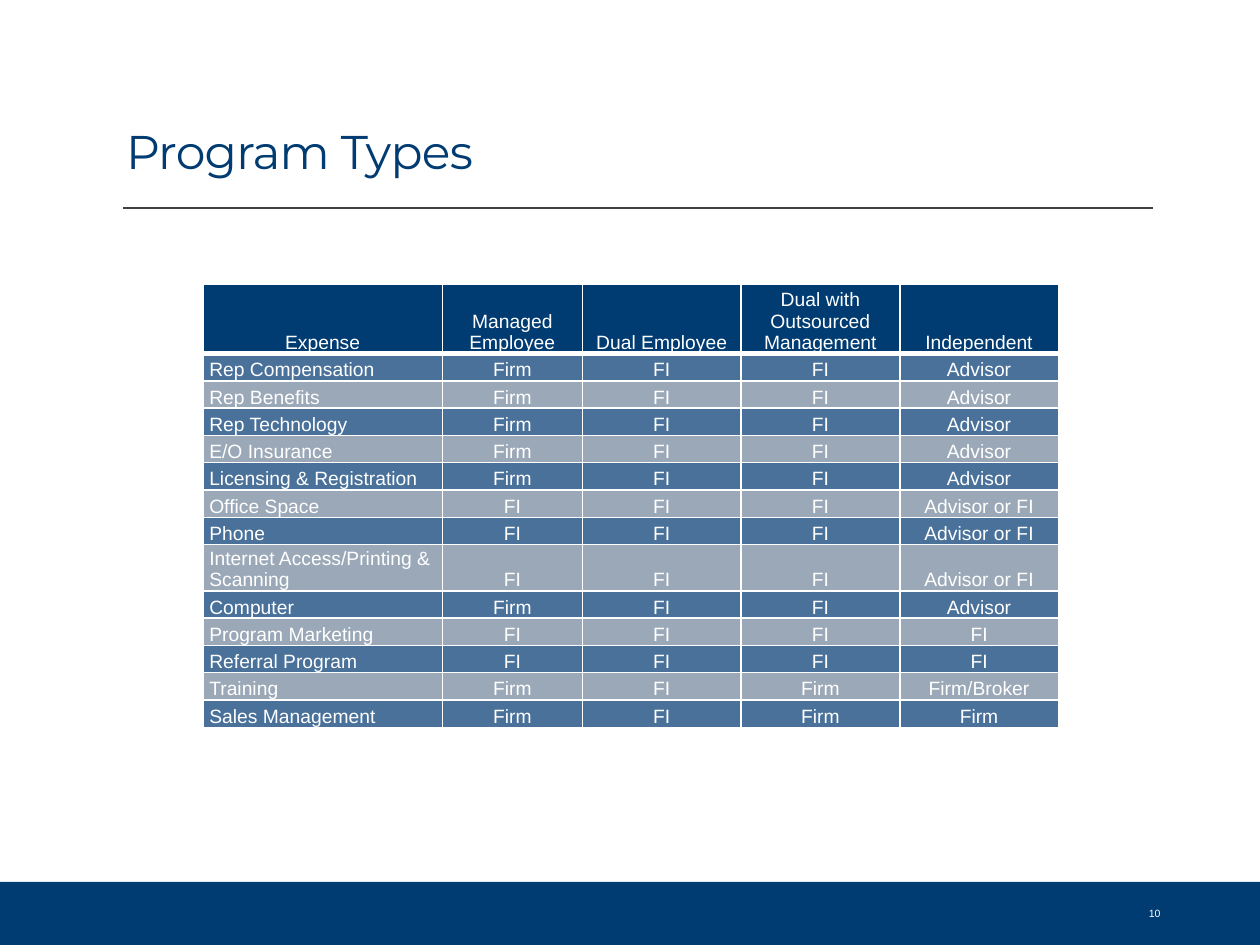
from dataclasses import dataclass

from lxml.etree import SubElement
from pptx import Presentation
from pptx.dml.color import RGBColor
from pptx.enum.shapes import MSO_CONNECTOR, MSO_SHAPE
from pptx.enum.text import MSO_ANCHOR, MSO_AUTO_SIZE, PP_ALIGN
from pptx.oxml.ns import qn
from pptx.util import Pt


@dataclass(frozen=True)
class Theme:
    navy: RGBColor = RGBColor.from_string("003B71")
    blue: RGBColor = RGBColor.from_string("49719A")
    grey: RGBColor = RGBColor.from_string("9BA8B7")
    rule: RGBColor = RGBColor.from_string("404040")
    white: RGBColor = RGBColor.from_string("FFFFFF")
    title_font: str = "Montserrat"
    body_font: str = "Arial"
    title_size: int = 27
    table_size: int = 11
    number_size: int = 6


theme = Theme()


def style_font(paragraph, name, size, color):
    paragraph.font.name = name
    paragraph.font.size = Pt(size)
    paragraph.font.color.rgb = color


def add_borders(cell, bottom_width):
    properties = cell._tc.get_or_add_tcPr()
    for side, width in (("L", 1), ("R", 1), ("T", 1), ("B", bottom_width)):
        border = SubElement(properties, qn(f"a:ln{side}"), w=str(Pt(width)))
        fill = SubElement(border, qn("a:solidFill"))
        SubElement(fill, qn("a:srgbClr"), val=str(theme.white))


presentation = Presentation()
presentation.slide_width = Pt(720)
presentation.slide_height = Pt(540)
slide = presentation.slides.add_slide(presentation.slide_layouts[5])

footer = slide.shapes.add_shape(MSO_SHAPE.RECTANGLE, Pt(0), Pt(504), Pt(720), Pt(36))
footer.shadow.inherit = False
footer.fill.solid()
footer.fill.fore_color.rgb = theme.navy
footer.line.fill.background()

title_rule = slide.shapes.add_connector(
    MSO_CONNECTOR.STRAIGHT, Pt(70.5), Pt(118.8), Pt(658.8), Pt(118.8)
)
title_rule.line.color.rgb = theme.rule
title_rule.line.width = Pt(1)
SubElement(title_rule._element.spPr, qn("a:effectLst"))

title = slide.shapes.title
title.left, title.top, title.width, title.height = Pt(64.8), Pt(-8), Pt(594), Pt(114.5)
title.text_frame.text = "Program Types"
title.text_frame.auto_size = MSO_AUTO_SIZE.NONE
title.text_frame.vertical_anchor = MSO_ANCHOR.BOTTOM
heading = title.text_frame.paragraphs[0]
heading.alignment = PP_ALIGN.LEFT
heading.line_spacing = 0.9
style_font(heading, theme.title_font, theme.title_size, theme.navy)
heading.runs[0]._r.get_or_add_rPr().set("spc", "-40")

page_number = slide.shapes.add_textbox(Pt(649.4), Pt(507.6), Pt(46), Pt(28.8)).text_frame
page_number.word_wrap = True
page_number.vertical_anchor = MSO_ANCHOR.MIDDLE
page_number.text = "10"
style_font(page_number.paragraphs[0], theme.body_font, theme.number_size, theme.white)

expenses = [
    ("Expense", "Managed Employee", "Dual Employee", "Dual with Outsourced Management", "Independent"),
    ("Rep Compensation", "Firm", "FI", "FI", "Advisor"),
    ("Rep Benefits", "Firm", "FI", "FI", "Advisor"),
    ("Rep Technology", "Firm", "FI", "FI", "Advisor"),
    ("E/O Insurance", "Firm", "FI", "FI", "Advisor"),
    ("Licensing & Registration", "Firm", "FI", "FI", "Advisor"),
    ("Office Space", "FI", "FI", "FI", "Advisor or FI"),
    ("Phone", "FI", "FI", "FI", "Advisor or FI"),
    ("Internet Access/Printing & Scanning", "FI", "FI", "FI", "Advisor or FI"),
    ("Computer", "Firm", "FI", "FI", "Advisor"),
    ("Program Marketing", "FI", "FI", "FI", "FI"),
    ("Referral Program", "FI", "FI", "FI", "FI"),
    ("Training", "Firm", "FI", "Firm", "Firm/Broker"),
    ("Sales Management", "Firm", "FI", "Firm", "Firm"),
]
column_widths = [136.8, 80, 90.7, 90.7, 90.7]
row_heights = [32.4] + [15.6] * 7 + [21.6] + [15.6] * 5

program_table = slide.shapes.add_table(
    len(expenses), len(column_widths),
    Pt(116), Pt(162.4), Pt(sum(column_widths)), Pt(sum(row_heights)),
).table
for column, width in zip(program_table.columns, column_widths):
    column.width = Pt(width)

for row_index, (row, height, entries) in enumerate(zip(program_table.rows, row_heights, expenses)):
    row.height = Pt(height)
    is_header = row_index == 0
    band = theme.navy if is_header else (theme.grey, theme.blue)[row_index % 2]
    for column_index, (cell, entry) in enumerate(zip(row.cells, entries)):
        add_borders(cell, 3 if is_header else 1)
        cell.fill.solid()
        cell.fill.fore_color.rgb = band
        cell.margin_left = cell.margin_right = Pt(3.6)
        cell.margin_top = cell.margin_bottom = Pt(0)
        cell.vertical_anchor = MSO_ANCHOR.BOTTOM
        cell.text = entry
        label = cell.text_frame.paragraphs[0]
        label.alignment = PP_ALIGN.CENTER if is_header or column_index else PP_ALIGN.LEFT
        label.font.bold = False
        style_font(label, theme.body_font, theme.table_size, theme.white)

presentation.save("out.pptx")
